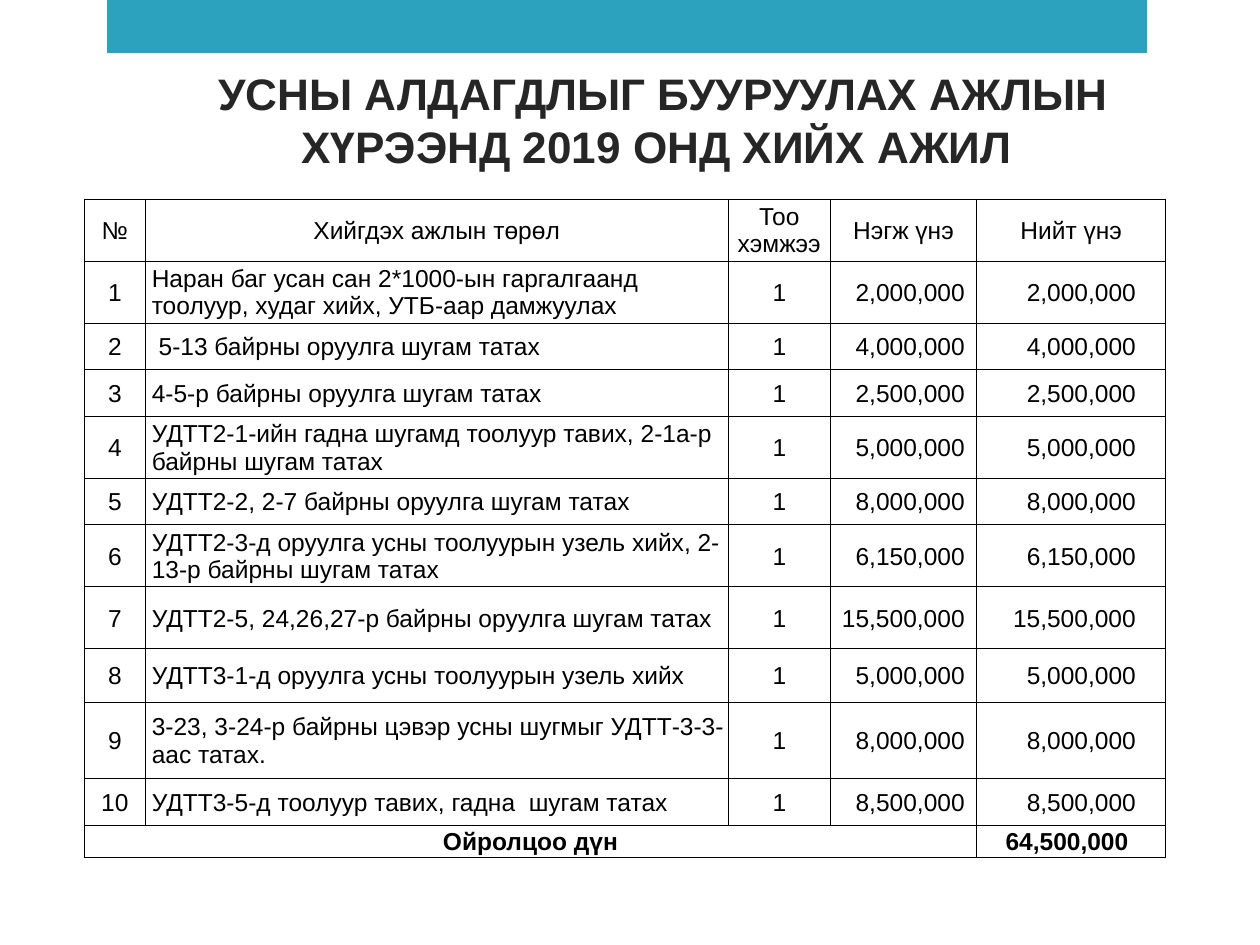
"""Build the slide with the 2019 water loss reduction work plan."""
from dataclasses import dataclass

import lxml.etree
import pptx
import pptx.dml.color
import pptx.enum.shapes
import pptx.enum.text
import pptx.oxml.ns
import pptx.util

Cm = pptx.util.Cm
Pt = pptx.util.Pt
Align = pptx.enum.text.PP_ALIGN
Anchor = pptx.enum.text.MSO_ANCHOR


@dataclass(frozen=True)
class Theme:
    font: str = "Arial"
    accent: str = "2DA2BF"
    title: str = "262626"
    text: str = "000000"
    border: str = "000000"
    total_fill: str = "FFFFFF"
    title_size: float = 25.2
    table_size: float = 14
    border_width: float = 0.5


THEME = Theme()

TITLE = " УСНЫ АЛДАГДЛЫГ БУУРУУЛАХ АЖЛЫН ХҮРЭЭНД 2019 ОНД ХИЙХ АЖИЛ"
HEADERS = ["№", "Хийгдэх ажлын төрөл", "Тоо хэмжээ", "Нэгж үнэ", "Нийт үнэ"]
WORKS = [
    ("Наран баг усан сан 2*1000-ын гаргалгаанд тоолуур, худаг хийх, УТБ-аар дамжуулах", 2_000_000),
    (" 5-13 байрны оруулга шугам татах", 4_000_000),
    ("4-5-р байрны оруулга шугам татах", 2_500_000),
    ("УДТТ2-1-ийн гадна шугамд тоолуур тавих, 2-1а-р байрны шугам татах", 5_000_000),
    ("УДТТ2-2, 2-7 байрны оруулга шугам татах", 8_000_000),
    ("УДТТ2-3-д оруулга усны тоолуурын узель хийх, 2-13-р байрны шугам татах", 6_150_000),
    ("УДТТ2-5, 24,26,27-р байрны оруулга шугам татах", 15_500_000),
    ("УДТТ3-1-д оруулга усны тоолуурын узель хийх", 5_000_000),
    ("3-23, 3-24-р байрны цэвэр усны шугмыг УДТТ-3-3-аас татах.", 8_000_000),
    ("УДТТ3-5-д тоолуур тавих, гадна  шугам татах", 8_500_000),
]
TOTAL_LABEL, TOTAL = "Ойролцоо дүн", 64_500_000

COLUMN_WIDTHS = [1.23, 11.75, 2.06, 2.95, 3.81]
ROW_HEIGHTS = [1.25, 1.25, 0.94, 0.94, 1.25, 0.94, 1.25, 1.25, 1.07, 1.55, 0.94, 0.64]
COLUMN_FORMATS = [
    {},
    {"align": Align.LEFT, "left": 0.13},
    {},
    {"align": Align.RIGHT, "right": 0.24},
    {"align": Align.RIGHT, "right": 0.6},
]


def rgb(value):
    """Return a colour from its hexadecimal form."""
    return pptx.dml.color.RGBColor.from_string(value)


def write_text(text_frame, text, *, size, color, bold=False, align=Align.CENTER):
    """Write one formatted paragraph into a text frame."""
    text_frame.word_wrap = True
    paragraph = text_frame.paragraphs[0]
    paragraph.alignment = align
    run = paragraph.add_run()
    run.text = text
    run.font.name = THEME.font
    run.font.size = Pt(size)
    run.font.bold = bold
    run.font.color.rgb = rgb(color)


def add_band(slide):
    """Add the coloured band at the top of the slide."""
    band = slide.shapes.add_shape(
        pptx.enum.shapes.MSO_SHAPE.RECTANGLE, Cm(2.16), 0, Cm(20.96), Cm(1.07)
    )
    band.shadow.inherit = False
    band.fill.solid()
    band.fill.fore_color.rgb = rgb(THEME.accent)
    band.line.fill.background()


def format_title(slide):
    """Place the title placeholder and write the title."""
    title = slide.shapes.title
    title.left, title.top, title.width, title.height = Cm(2.34), Cm(1.27), Cm(21.8), Cm(2.34)
    title.text_frame.auto_size = pptx.enum.text.MSO_AUTO_SIZE.NONE
    title.text_frame.vertical_anchor = Anchor.BOTTOM
    write_text(title.text_frame, TITLE, size=THEME.title_size, color=THEME.title, bold=True)


def add_borders(cell):
    """Draw a thin line on all four sides of a cell."""
    properties = cell._tc.get_or_add_tcPr()
    for index, side in enumerate(("lnL", "lnR", "lnT", "lnB")):
        line = lxml.etree.Element(pptx.oxml.ns.qn(f"a:{side}"), w=str(Pt(THEME.border_width)))
        fill = lxml.etree.SubElement(line, pptx.oxml.ns.qn("a:solidFill"))
        lxml.etree.SubElement(fill, pptx.oxml.ns.qn("a:srgbClr"), val=THEME.border)
        properties.insert(index, line)


def format_cell(cell, fill=None):
    """Give a cell its fill and borders."""
    if fill:
        cell.fill.solid()
        cell.fill.fore_color.rgb = rgb(fill)
    else:
        cell.fill.background()
    add_borders(cell)


def write_cell(cell, text, *, left=0.03, right=0.03, **text_format):
    """Write text into a cell with narrow margins."""
    cell.margin_left, cell.margin_right = Cm(left), Cm(right)
    cell.margin_top, cell.margin_bottom = Cm(0.03), 0
    cell.vertical_anchor = Anchor.MIDDLE
    write_text(cell.text_frame, text, size=THEME.table_size, color=THEME.text, **text_format)


def add_work_table(slide):
    """Add the table of works, prices and the total."""
    table = slide.shapes.add_table(
        len(ROW_HEIGHTS), len(COLUMN_WIDTHS), Cm(1.7), Cm(4.01),
        Cm(sum(COLUMN_WIDTHS)), Cm(sum(ROW_HEIGHTS)),
    ).table
    table.first_row = table.horz_banding = False
    for column, width in zip(table.columns, COLUMN_WIDTHS):
        column.width = Cm(width)
    for row, height in zip(table.rows, ROW_HEIGHTS):
        row.height = Cm(height)

    last = len(ROW_HEIGHTS) - 1
    for row_index, row in enumerate(table.rows):
        for cell in row.cells:
            format_cell(cell, THEME.total_fill if row_index == last else None)

    for column_index, header in enumerate(HEADERS):
        write_cell(table.cell(0, column_index), header)
    for number, (work, price) in enumerate(WORKS, start=1):
        values = [str(number), work, "1", f"{price:,}", f"{price:,}"]
        for column_index, (value, cell_format) in enumerate(zip(values, COLUMN_FORMATS)):
            write_cell(table.cell(number, column_index), value, **cell_format)

    table.cell(last, 0).merge(table.cell(last, 3))
    write_cell(table.cell(last, 0), TOTAL_LABEL, bold=True)
    write_cell(table.cell(last, 4), f"{TOTAL:,}", bold=True, right=0.2)


def main():
    """Build and save the presentation."""
    presentation = pptx.Presentation()
    presentation.slide_width, presentation.slide_height = Cm(25.4), Cm(19.05)
    slide = presentation.slides.add_slide(presentation.slide_layouts[5])
    add_band(slide)
    format_title(slide)
    add_work_table(slide)
    presentation.save("out.pptx")


if __name__ == "__main__":
    main()
